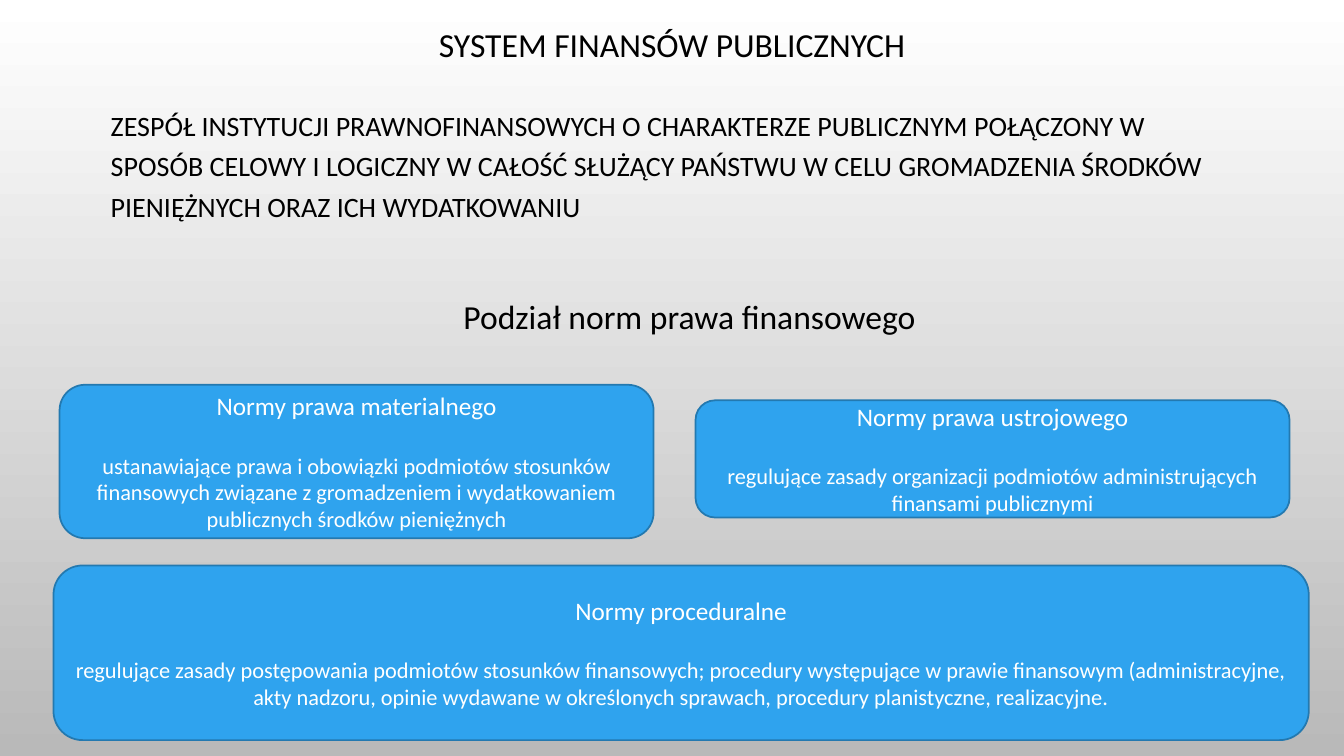
"""Build a slide on the public finance system and the kinds of financial law norms."""
from pptx import Presentation
from pptx.dml.color import RGBColor as Rgb
from pptx.enum.shapes import MSO_SHAPE as Shape
from pptx.enum.text import MSO_ANCHOR as Anchor, PP_ALIGN as Align
from pptx.util import Inches, Pt

HUES = {"top": "FFFFFF", "base": "B9B9B9", "ink": "000000",
        "white": "FFFFFF", "fill": "2FA3EE", "edge": "2379B0"}
WIDE, HIGH = 13.33, 7.5
COL, ROW = WIDE / 100, HIGH / 100

deck = Presentation()
deck.slide_width, deck.slide_height = Inches(WIDE), Inches(HIGH)
slide = deck.slides.add_slide(deck.slide_layouts[6])

back = slide.background.fill
back.gradient()
back.gradient_angle = 270
for stop, spot, hue in zip(back.gradient_stops, (0, 1), ("top", "base")):
    stop.position = spot
    stop.color.rgb = Rgb.from_string(HUES[hue])


def place(x, y, w, h):
    """Turn grid columns and rows into lengths."""
    return Inches(x * COL), Inches(y * ROW), Inches(w * COL), Inches(h * ROW)


def write(para, text, size=24, hue="ink", align=Align.CENTER, line=None, gap=None):
    """Put formatted text into a paragraph."""
    para.text = text
    para.alignment = align
    para.line_spacing = line
    para.space_before = gap
    para.font.name = "Calibri"
    para.font.size = Pt(size)
    para.font.color.rgb = Rgb.from_string(HUES[hue])


heads = [
    ("SYSTEM FINANSÓW PUBLICZNYCH", (7.5, 2.8, 85, 6.8), Anchor.MIDDLE,
     {"line": 0.9}),
    ("ZESPÓŁ INSTYTUCJI PRAWNOFINANSOWYCH O CHARAKTERZE PUBLICZNYM POŁĄCZONY W "
     "SPOSÓB CELOWY I LOGICZNY W CAŁOŚĆ SŁUŻĄCY PAŃSTWU W CELU GROMADZENIA ŚRODKÓW "
     "PIENIĘŻNYCH ORAZ ICH WYDATKOWANIU", (7.5, 12.8, 85, 20), Anchor.TOP,
     {"size": 20, "align": Align.LEFT, "line": 1.2}),
    ("Podział norm prawa finansowego", (26.25, 38.5, 50.1, 6.7), Anchor.TOP, {}),
]
for text, area, anchor, style in heads:
    frame = slide.shapes.add_textbox(*place(*area)).text_frame
    frame.word_wrap = True
    frame.vertical_anchor = anchor
    write(frame.paragraphs[0], text, **style)

norms = [
    ("Normy prawa materialnego",
     "ustanawiające prawa i obowiązki podmiotów stosunków finansowych związane "
     "z gromadzeniem i wydatkowaniem publicznych środków pieniężnych",
     (4.43, 50.9, 44.2, 20.3)),
    ("Normy prawa ustrojowego",
     "regulujące zasady organizacji podmiotów administrujących finansami publicznymi",
     (51.75, 52.95, 44.2, 15.5)),
    ("Normy proceduralne",
     "regulujące zasady postępowania podmiotów stosunków finansowych; procedury "
     "występujące w prawie finansowym (administracyjne, akty nadzoru, opinie wydawane "
     "w określonych sprawach, procedury planistyczne, realizacyjne.",
     (3.98, 74.8, 93.4, 23.1)),
]
for name, text, area in norms:
    card = slide.shapes.add_shape(Shape.ROUNDED_RECTANGLE, *place(*area))
    card.shadow.inherit = False
    card.fill.solid()
    card.fill.fore_color.rgb = Rgb.from_string(HUES["fill"])
    card.line.color.rgb = Rgb.from_string(HUES["edge"])
    card.line.width = Pt(1.25)
    frame = card.text_frame
    frame.word_wrap = True
    frame.vertical_anchor = Anchor.MIDDLE
    write(frame.paragraphs[0], name, size=18, hue="white")
    write(frame.add_paragraph(), text, size=16, hue="white", gap=Pt(22))

deck.save("out.pptx")
